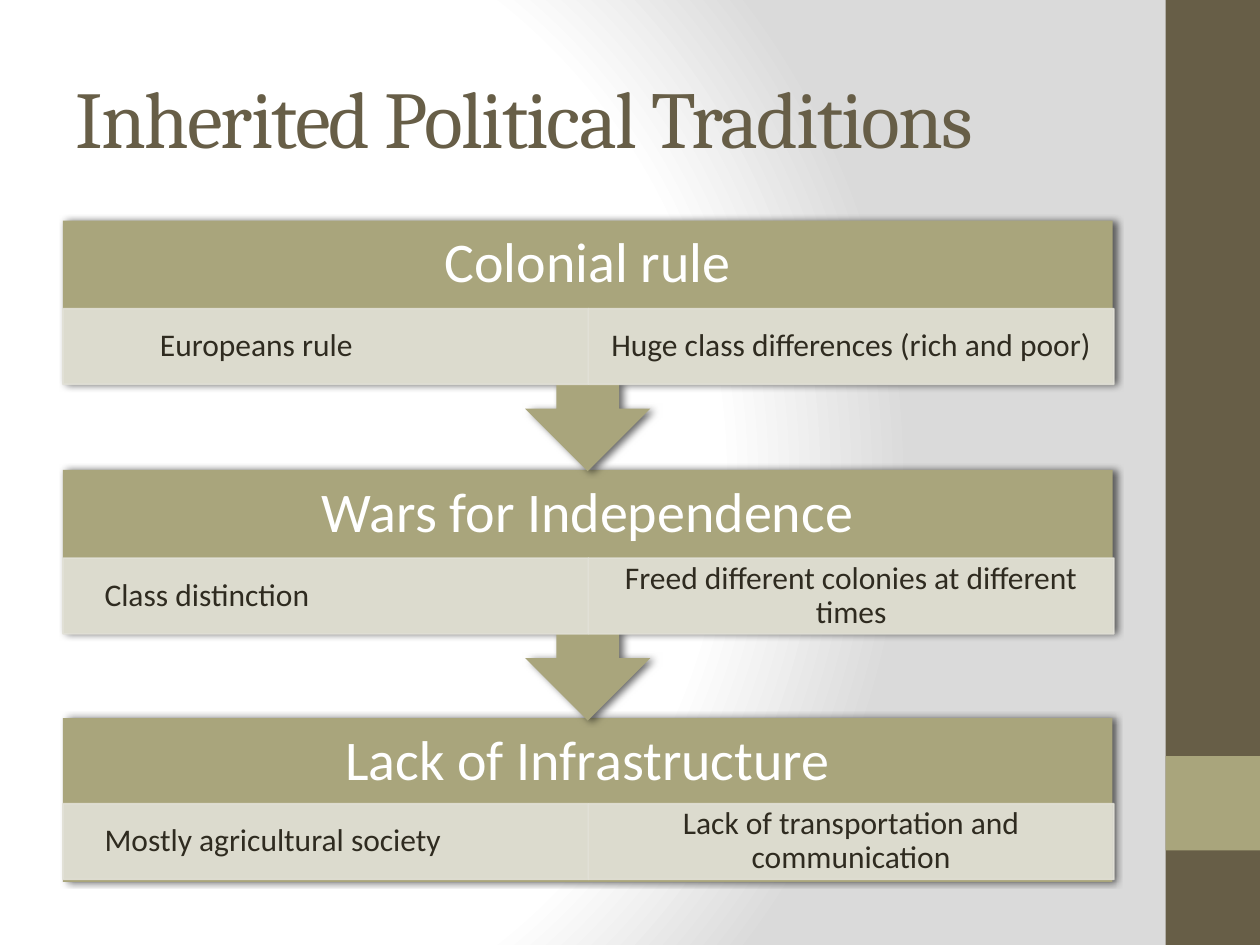
"""Build the Inherited Political Traditions slide as a three-step downward flow."""
import pptx
import pptx.dml.color
import pptx.enum.shapes
import pptx.enum.text
import pptx.oxml
import pptx.oxml.ns
import pptx.util
from lxml import etree

Inches = pptx.util.Inches
RGBColor = pptx.dml.color.RGBColor
Shape = pptx.enum.shapes.MSO_SHAPE
Align = pptx.enum.text.PP_ALIGN
qn = pptx.oxml.ns.qn

BROWN = RGBColor(0x67, 0x5E, 0x47)
OLIVE = RGBColor(0xA9, 0xA5, 0x7C)
PALE = RGBColor(0xE2, 0xE1, 0xD7)
DARK = RGBColor(0x2F, 0x2B, 0x20)
WHITE = RGBColor(0xFF, 0xFF, 0xFF)

NAMESPACE = 'xmlns:a="http://schemas.openxmlformats.org/drawingml/2006/main"'
BACKGROUND = f"""<a:gradFill {NAMESPACE} rotWithShape="1"><a:gsLst>
<a:gs pos="0"><a:srgbClr val="FFFFFF"/></a:gs>
<a:gs pos="75000"><a:srgbClr val="FFFFFF"/></a:gs>
<a:gs pos="100000"><a:srgbClr val="DADADA"/></a:gs></a:gsLst>
<a:path path="circle"><a:fillToRect l="20000" t="50000" r="100000" b="50000"/></a:path>
</a:gradFill>"""
SHADOW = f"""<a:effectLst {NAMESPACE}><a:outerShdw blurRad="50800" dist="25400" dir="0"
rotWithShape="0"><a:srgbClr val="000000"><a:alpha val="60000"/></a:srgbClr>
</a:outerShdw></a:effectLst>"""

LEFT, WIDTH = 0.5, 8.33
CELL_WIDTH, CELL_HEIGHT = 4.17, 0.6
HEADING_HEIGHT = 0.7
STEPS = [
    (1.75, 1.99, 0.7, "Colonial rule",
     [("Europeans rule", Align.LEFT, 0.77),
      ("Huge class differences (rich and poor)", Align.CENTER, 0.14)]),
    (3.73, 1.99, 0.7, "Wars for Independence",
     [("Class distinction", Align.LEFT, 0.33),
      ("Freed different colonies at different times", Align.CENTER, 0.14)]),
    (5.7, 1.3, 0.68, "Lack of Infrastructure",
     [("Mostly agricultural society", Align.LEFT, 0.33),
      ("Lack of transportation and communication", Align.CENTER, 0.14)]),
]

presentation = pptx.Presentation()
presentation.slide_width = Inches(10)
presentation.slide_height = Inches(7.5)
slide = presentation.slides.add_slide(presentation.slide_layouts[6])
slide.background.fill.solid()
background = slide.element.find(".//" + qn("p:bgPr"))
background.replace(background[0], pptx.oxml.parse_xml(BACKGROUND))


def add_block(kind, left, top, width, height, color):
    shape = slide.shapes.add_shape(
        kind, Inches(left), Inches(top), Inches(width), Inches(height))
    shape.shadow.inherit = False
    shape.fill.solid()
    shape.fill.fore_color.rgb = color
    shape.line.fill.background()
    return shape


def write_text(shape, text, size, font, color, align, left_margin, spacing=0.9):
    frame = shape.text_frame
    frame.word_wrap = True
    frame.vertical_anchor = pptx.enum.text.MSO_ANCHOR.MIDDLE
    frame.margin_left = Inches(left_margin)
    frame.margin_right = Inches(0.14)
    frame.margin_top = frame.margin_bottom = Inches(0.03)
    paragraph = frame.paragraphs[0]
    paragraph.alignment = align
    paragraph.line_spacing = spacing
    run = paragraph.add_run()
    run.text = text
    run.font.size = pptx.util.Pt(size)
    run.font.name = font
    run.font.color.rgb = color
    return run


add_block(Shape.RECTANGLE, 9.25, 0, 0.75, 7.5, BROWN)
add_block(Shape.RECTANGLE, 9.25, 6, 0.75, 0.75, OLIVE)

title = slide.shapes.add_textbox(Inches(LEFT), Inches(0.3), Inches(WIDTH), Inches(1.25))
title_run = write_text(title, "Inherited Political Traditions", 46, "Cambria", BROWN,
                       Align.LEFT, 0.1, 1.0)
title_run.font._element.set("spc", "-100")

for top, height, cell_offset, heading, details in reversed(STEPS):
    kind = Shape.RECTANGLE if top == STEPS[-1][0] else Shape.DOWN_ARROW_CALLOUT
    step = add_block(kind, LEFT, top, WIDTH, height, OLIVE)
    properties = step.element.spPr
    properties.replace(properties.find(qn("a:effectLst")), pptx.oxml.parse_xml(SHADOW))

    heading_box = slide.shapes.add_textbox(
        Inches(LEFT), Inches(top), Inches(WIDTH), Inches(HEADING_HEIGHT))
    write_text(heading_box, heading, 32, "Calibri", WHITE, Align.CENTER, 0.14)

    for column, (detail, align, margin) in enumerate(details):
        cell = add_block(Shape.RECTANGLE, LEFT + column * CELL_WIDTH, top + cell_offset,
                         CELL_WIDTH, CELL_HEIGHT, PALE)
        cell.line.color.rgb = PALE
        cell.line.width = pptx.util.Pt(1)
        for color in cell.element.spPr.iter(qn("a:srgbClr")):
            etree.SubElement(color, qn("a:alpha"), val="90000")
        write_text(cell, detail, 18, "Calibri", DARK, align, margin)

presentation.save("out.pptx")
